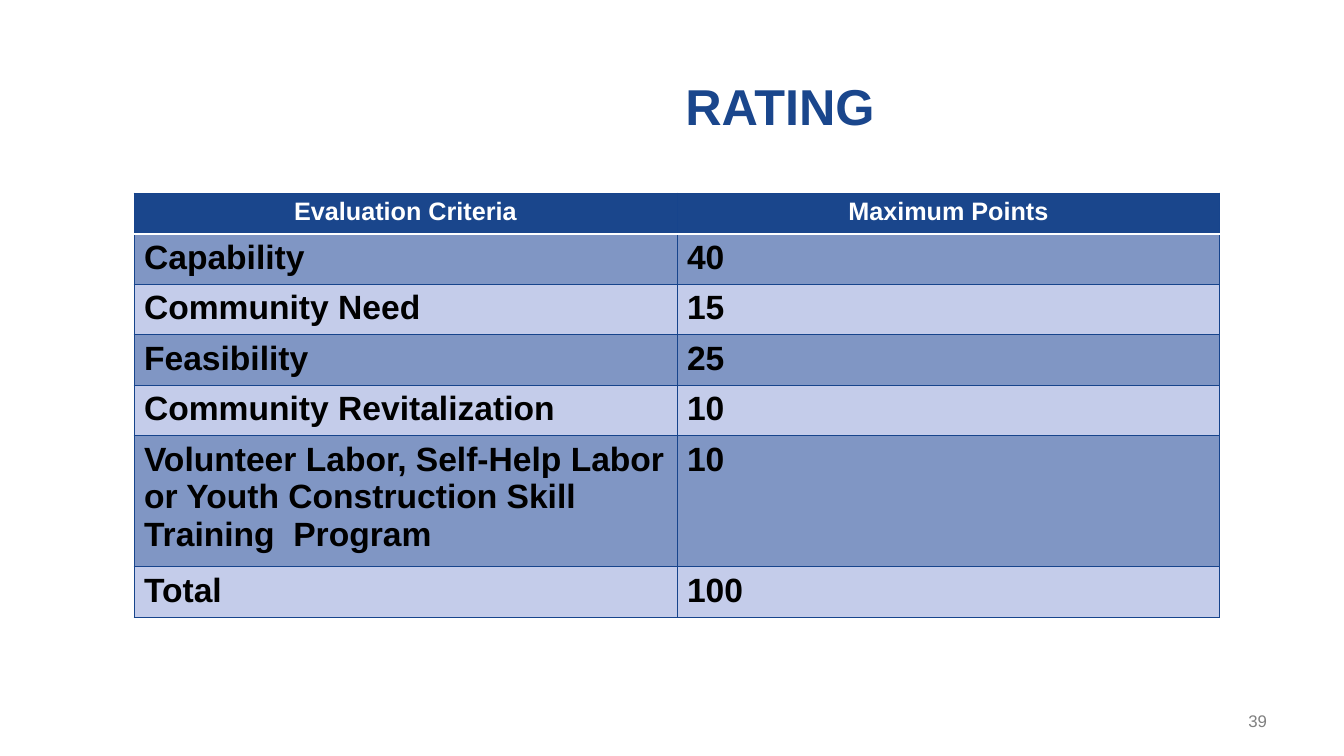
from pptx import Presentation
from pptx.dml.color import RGBColor
from pptx.enum.text import MSO_ANCHOR as Anchor, PP_ALIGN as Align
from pptx.oxml.ns import qn
from pptx.util import Pt
from lxml.etree import SubElement

EMU_PER_PX = 12192000 / 1344
NAVY, EDGE, WHITE, BLACK, GREY = "1A468C", "17448C", "FFFFFF", "000000", "808080"
BANDS = ("8096C4", "C4CCEA")
RATINGS = [
    ("Evaluation Criteria", "Maximum Points"),
    ("Capability", "40"),
    ("Community Need", "15"),
    ("Feasibility", "25"),
    ("Community Revitalization", "10"),
    ("Volunteer Labor, Self-Help Labor or Youth Construction Skill Training  Program", "10"),
    ("Total", "100"),
]
ROW_HEIGHTS = [41, 47, 48, 47, 48, 122, 48]


def px(length):
    return round(length * EMU_PER_PX)


def color(code):
    return RGBColor.from_string(code)


class RatingSlide:
    """Holds the font and the current slide, and draws its elements."""

    def __init__(self, deck, font):
        self.font = font
        self.slide = deck.slides.add_slide(deck.slide_layouts[6])

    def line_of_text(self, frame, words, size, code, bold, align):
        paragraph = frame.paragraphs[0]
        paragraph.alignment = align
        run = paragraph.add_run()
        run.text = words
        style = {"name": self.font, "size": Pt(size), "bold": bold}
        for key, value in style.items():
            setattr(run.font, key, value)
        run.font.color.rgb = color(code)

    def text(self, words, box, size, code, bold, align, **margins):
        frame = self.slide.shapes.add_textbox(*map(px, box)).text_frame
        settings = {"word_wrap": True, "vertical_anchor": Anchor.MIDDLE, **margins}
        for key, value in settings.items():
            setattr(frame, key, value)
        self.line_of_text(frame, words, size, code, bold, align)

    def border(self, cell, side, code, width):
        line = SubElement(cell._tc.get_or_add_tcPr(), qn(f"a:ln{side}"), w=str(Pt(width)))
        fill = SubElement(line, qn("a:solidFill"))
        SubElement(fill, qn("a:srgbClr"), val=code)

    def cell(self, cell, words, row):
        header = row == 0
        edges = {side: (EDGE, 0.75) for side in "LRTB"}
        if header:
            edges["B"] = (WHITE, 2)
        elif row == 1:
            edges["T"] = (WHITE, 2)
        for side, (code, width) in edges.items():
            self.border(cell, side, code, width)
        cell.fill.solid()
        cell.fill.fore_color.rgb = color(NAVY if header else BANDS[(row - 1) % 2])
        size, code, align = (18, WHITE, Align.CENTER) if header else (24, BLACK, Align.LEFT)
        self.line_of_text(cell.text_frame, words, size, code, True, align)

    def table(self, rows, heights, left, top, width):
        box = map(px, (left, top, width, sum(heights)))
        grid = self.slide.shapes.add_table(len(rows), len(rows[0]), *box).table
        for row, (entries, height) in enumerate(zip(rows, heights)):
            grid.rows[row].height = px(height)
            for column, words in enumerate(entries):
                self.cell(grid.cell(row, column), words, row)


def main():
    deck = Presentation()
    deck.slide_width, deck.slide_height = px(1344), px(756)
    rating = RatingSlide(deck, "Arial")
    rating.text("RATING", (258, 42, 1044, 126), 36, NAVY, True, Align.CENTER,
                margin_left=0, margin_top=0, margin_right=0, margin_bottom=0)
    rating.table(RATINGS, ROW_HEIGHTS, 134, 193, 1086)
    rating.text("39", (964, 701, 313, 40), 12, GREY, False, Align.RIGHT)
    deck.save("out.pptx")


if __name__ == "__main__":
    main()
